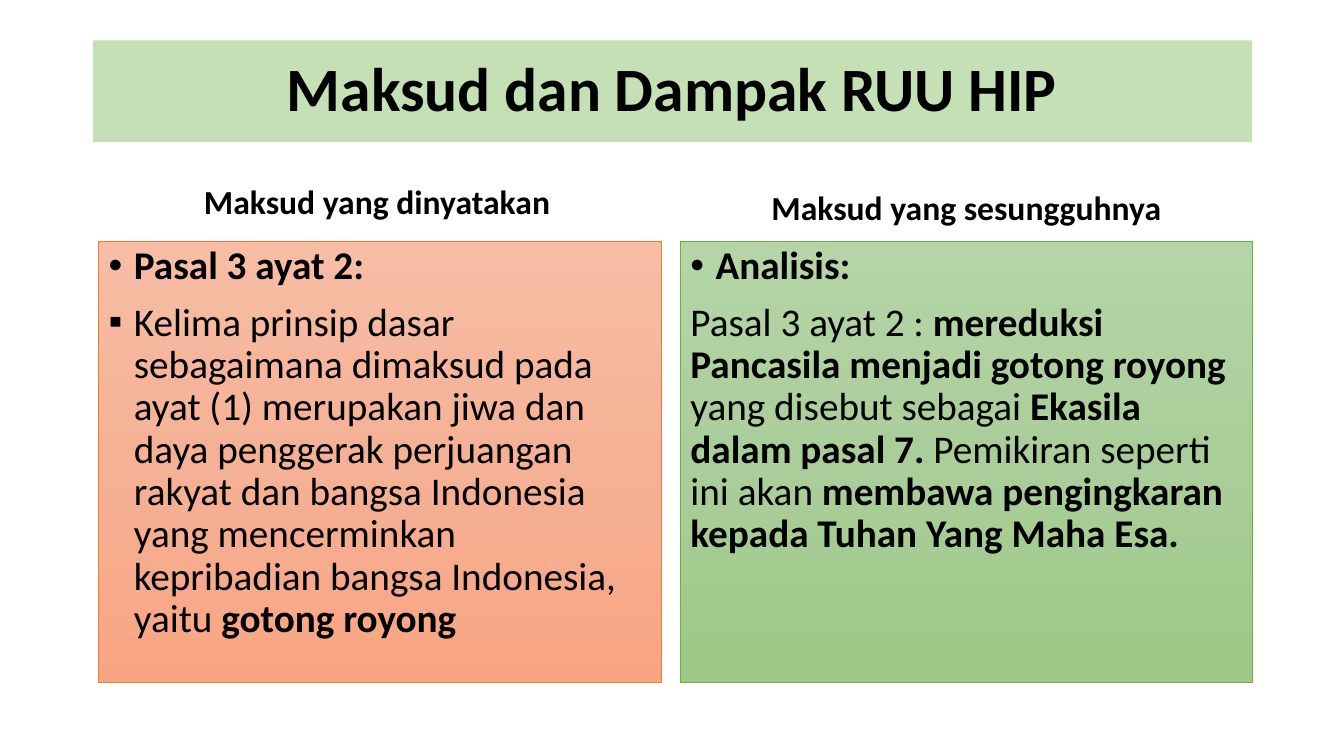
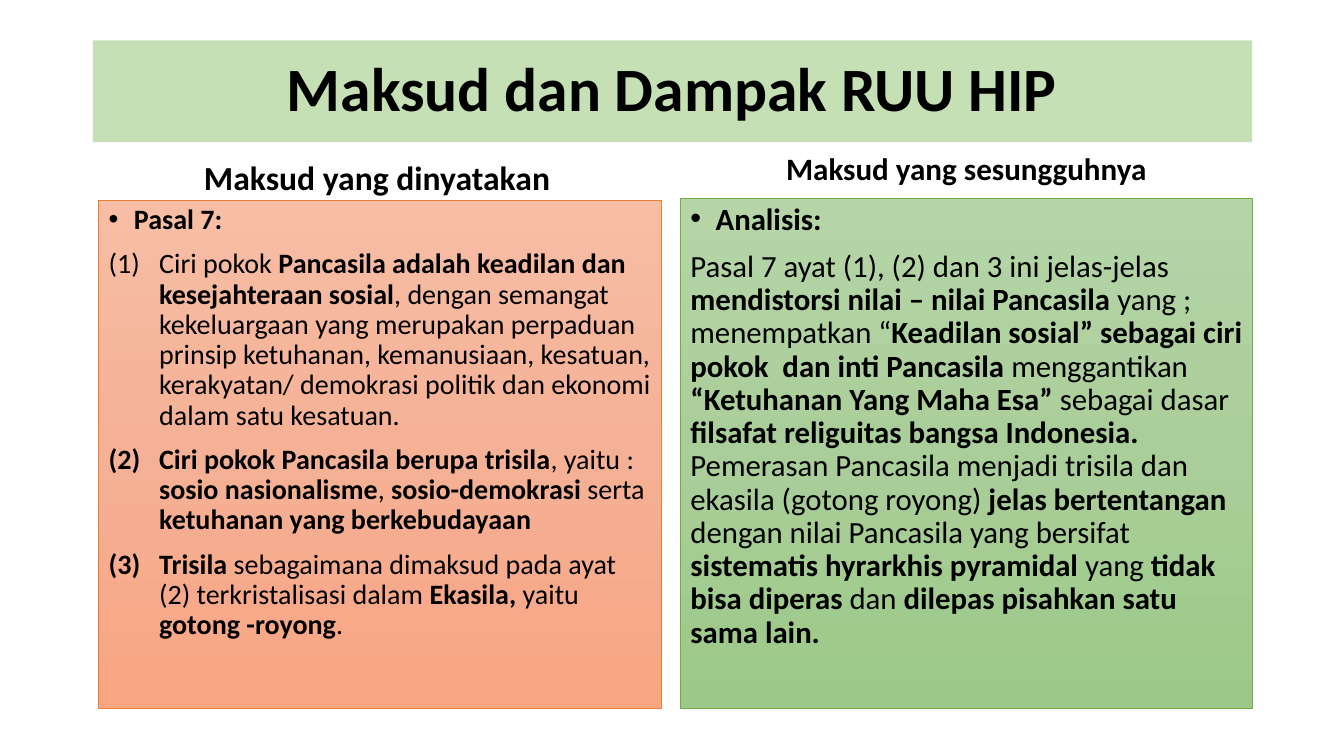
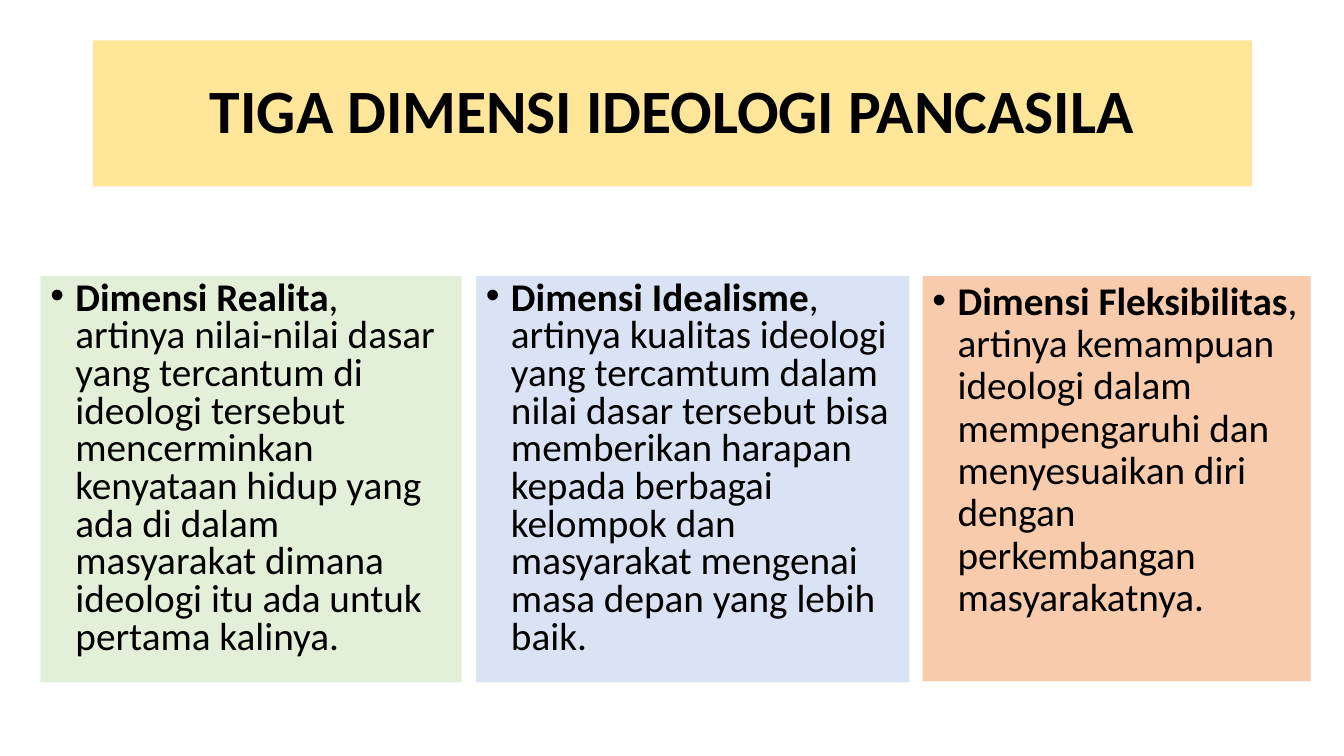
from copy import deepcopy

from lxml import etree
from pptx import Presentation
from pptx import util as u
from pptx.dml.color import RGBColor
from pptx.enum import shapes, text
from pptx.oxml import ns

FONT = "Calibri"
BLACK = RGBColor(0, 0, 0)
LIME = RGBColor(0xC5, 0xE0, 0xB4)
GOLD = RGBColor(0xFF, 0xE6, 0x99)
MINT = RGBColor(0xE2, 0xF0, 0xD9)
SKY = RGBColor(0xDA, 0xE3, 0xF3)
PEACH = RGBColor(0xF8, 0xCB, 0xAD)
ORANGE = RGBColor(0xED, 0x7D, 0x31)
GREEN = RGBColor(0x70, 0xAD, 0x47)
WARM = [RGBColor.from_string(c) for c in ("F7BDA5", "F5B196", "F8A582")]
COOL = [RGBColor.from_string(c) for c in ("B5D5A7", "AACE9A", "9CC987")]

# Bullet kind: indent, tag and attributes
BULLETS = {
    "dot": (0.25, "a:buChar", {"char": "•"}),
    "square": (0.25, "a:buChar", {"char": "▪"}),
    "number": (0.5, "a:buAutoNum", {"type": "arabicParenBoth"}),
}
TITLE = "Maksud dan Dampak RUU HIP"
STATED = "Maksud yang dinyatakan"
ACTUAL = "Maksud yang sesungguhnya"


def write(shape, paras, size, spacing=0.9, before=10, center=False,
          anchor=text.MSO_ANCHOR.TOP):
    """Fill a shape with (bullet, words) pairs; asterisks enclose bold words."""
    frame = shape.text_frame
    form = {"word_wrap": True, "auto_size": text.MSO_AUTO_SIZE.NONE,
            "vertical_anchor": anchor}
    for name, value in form.items():
        setattr(frame, name, value)
    for i, (bullet, words) in enumerate(paras):
        para = frame.add_paragraph() if i else frame.paragraphs[0]
        para.alignment = text.PP_ALIGN.CENTER if center else text.PP_ALIGN.LEFT
        para.line_spacing = spacing
        para.space_before = u.Pt(before)
        if bullet:
            indent, tag, attrs = BULLETS[bullet]
            props = para._p.get_or_add_pPr()
            props.set("marL", str(u.Inches(indent)))
            props.set("indent", str(-u.Inches(indent)))
            if tag == "a:buChar":
                etree.SubElement(props, ns.qn("a:buFont"), typeface="Arial")
            etree.SubElement(props, ns.qn(tag), attrs)
        for k, part in enumerate(words.split("*")):
            if part:
                run = para.add_run()
                run.text = part
                style = {"name": FONT, "size": u.Pt(size), "bold": k % 2 == 1}
                for name, value in style.items():
                    setattr(run.font, name, value)
                run.font.color.rgb = BLACK


def start(words, fill, height):
    """Add a slide with its title band."""
    slide = deck.slides.add_slide(deck.slide_layouts[5])
    band = slide.shapes.title
    place = {"left": 0.92, "top": 0.4, "width": 11.5, "height": height}
    for name, value in place.items():
        setattr(band, name, u.Inches(value))
    band.fill.solid()
    band.fill.fore_color.rgb = fill
    write(band, [(None, f"*{words}*")], 44, before=0, center=True,
          anchor=text.MSO_ANCHOR.MIDDLE)
    return slide


deck = Presentation()
deck.slide_width = u.Inches(13.33)
deck.slide_height = u.Inches(7.5)

# Each column: heading top, height and size; panel top, height and size; text
PAIRS = [
    (0.9, [
        (1.63, 0.62, 24, 2.39, 4.38, 28, [
            ("dot", "*Pasal 3 ayat 2:*"),
            ("square", "Kelima prinsip dasar sebagaimana dimaksud pada ayat (1) "
             "merupakan jiwa dan daya penggerak perjuangan rakyat dan bangsa "
             "Indonesia yang mencerminkan kepribadian bangsa Indonesia, yaitu "
             "*gotong royong*"),
        ]),
        (1.63, 0.68, 24, 2.39, 4.38, 28, [
            ("dot", "*Analisis:*"),
            (None, "Pasal 3 ayat 2 : *mereduksi Pancasila menjadi gotong royong "
             "*yang disebut sebagai *Ekasila dalam pasal 7. *Pemikiran seperti "
             "ini akan *membawa pengingkaran kepada Tuhan Yang Maha Esa.*"),
        ]),
    ]),
    (0.8, [
        (1.57, 0.43, 24, 1.99, 5.04, 20, [
            ("dot", "*Pasal 7:*"),
            ("number", "Ciri pokok *Pancasila adalah keadilan dan kesejahteraan "
             "sosial*, dengan semangat kekeluargaan yang merupakan perpaduan "
             "prinsip ketuhanan, kemanusiaan, kesatuan, kerakyatan/ demokrasi "
             "politik dan ekonomi dalam satu kesatuan."),
            ("number", "*Ciri pokok Pancasila berupa trisila*, yaitu : *sosio "
             "nasionalisme*, *sosio-demokrasi* serta *ketuhanan yang "
             "berkebudayaan*"),
            ("number", "*Trisila* sebagaimana dimaksud pada ayat (2) "
             "terkristalisasi dalam *Ekasila,* yaitu *gotong -royong*."),
        ]),
        (1.49, 0.41, 22.2, 1.97, 5.06, 22, [
            ("dot", "*Analisis:*"),
            (None, "Pasal 7 ayat (1), (2) dan 3 ini jelas-jelas *mendistorsi "
             "nilai – nilai Pancasila *yang ; menempatkan “*Keadilan sosial” "
             "sebagai ciri pokok  dan inti Pancasila *menggantikan *“Ketuhanan "
             "Yang Maha Esa” *sebagai dasar *filsafat religuitas bangsa "
             "Indonesia. *Pemerasan Pancasila menjadi trisila dan ekasila "
             "(gotong royong) *jelas bertentangan *dengan nilai Pancasila yang "
             "bersifat *sistematis hyrarkhis pyramidal *yang *tidak bisa diperas "
             "*dan *dilepas pisahkan satu sama lain.*"),
        ]),
    ]),
]
# Each side: heading, its left and width, panel left and width, colours
SIDES = [
    (STATED, 0.92, 5.64, 0.98, 5.58, WARM, ORANGE),
    (ACTUAL, 6.75, 5.67, 6.75, 5.67, COOL, GREEN),
]

for spacing, columns in PAIRS:
    slide = start(TITLE, LIME, 1.01)
    for side, column in zip(SIDES, columns):
        head, hleft, hwide, left, wide, shades, edge = side
        htop, htall, hsize, top, tall, size, paras = column
        label = slide.shapes.add_textbox(
            *map(u.Inches, (hleft, htop, hwide, htall)))
        write(label, [(None, f"*{head}*")], hsize, spacing, center=True,
              anchor=text.MSO_ANCHOR.BOTTOM)
        panel = slide.shapes.add_shape(
            shapes.MSO_SHAPE.RECTANGLE, *map(u.Inches, (left, top, wide, tall)))
        panel.shadow.inherit = False
        panel.fill.gradient()
        panel.fill.gradient_angle = 270
        stops = panel._element.spPr.find(".//" + ns.qn("a:gsLst"))
        stops.insert(1, deepcopy(stops[0]))
        for i, stop in enumerate(panel.fill.gradient_stops):
            stop.position = i / 2
            stop.color.rgb = shades[i]
        panel.line.color.rgb = edge
        panel.line.width = u.Pt(0.5)
        write(panel, paras, size)

CARDS = [
    (0.4, 4.18, 4.03, MINT, 0.8,
     "*Dimensi Realita*, artinya nilai-nilai dasar yang tercantum di ideologi "
     "tersebut mencerminkan kenyataan hidup yang ada di dalam masyarakat dimana "
     "ideologi itu ada untuk pertama kalinya."),
    (4.72, 4.3, 4.03, SKY, 0.8,
     "*Dimensi Idealisme*, artinya kualitas ideologi yang tercamtum dalam nilai "
     "dasar tersebut bisa memberikan harapan kepada berbagai kelompok dan "
     "masyarakat mengenai masa depan yang lebih baik."),
    (9.15, 3.85, 4.02, PEACH, 0.9,
     "*Dimensi Fleksibilitas*, artinya kemampuan ideologi dalam mempengaruhi dan "
     "menyesuaikan diri dengan perkembangan masyarakatnya."),
]
slide = start("TIGA DIMENSI IDEOLOGI PANCASILA", GOLD, 1.45)
for left, wide, tall, fill, spacing, words in CARDS:
    card = slide.shapes.add_shape(
        shapes.MSO_SHAPE.RECTANGLE, *map(u.Inches, (left, 2.74, wide, tall)))
    card.shadow.inherit = False
    card.fill.solid()
    card.fill.fore_color.rgb = fill
    card.line.fill.background()
    write(card, [("dot", words)], 28, spacing)

deck.save("out.pptx")
